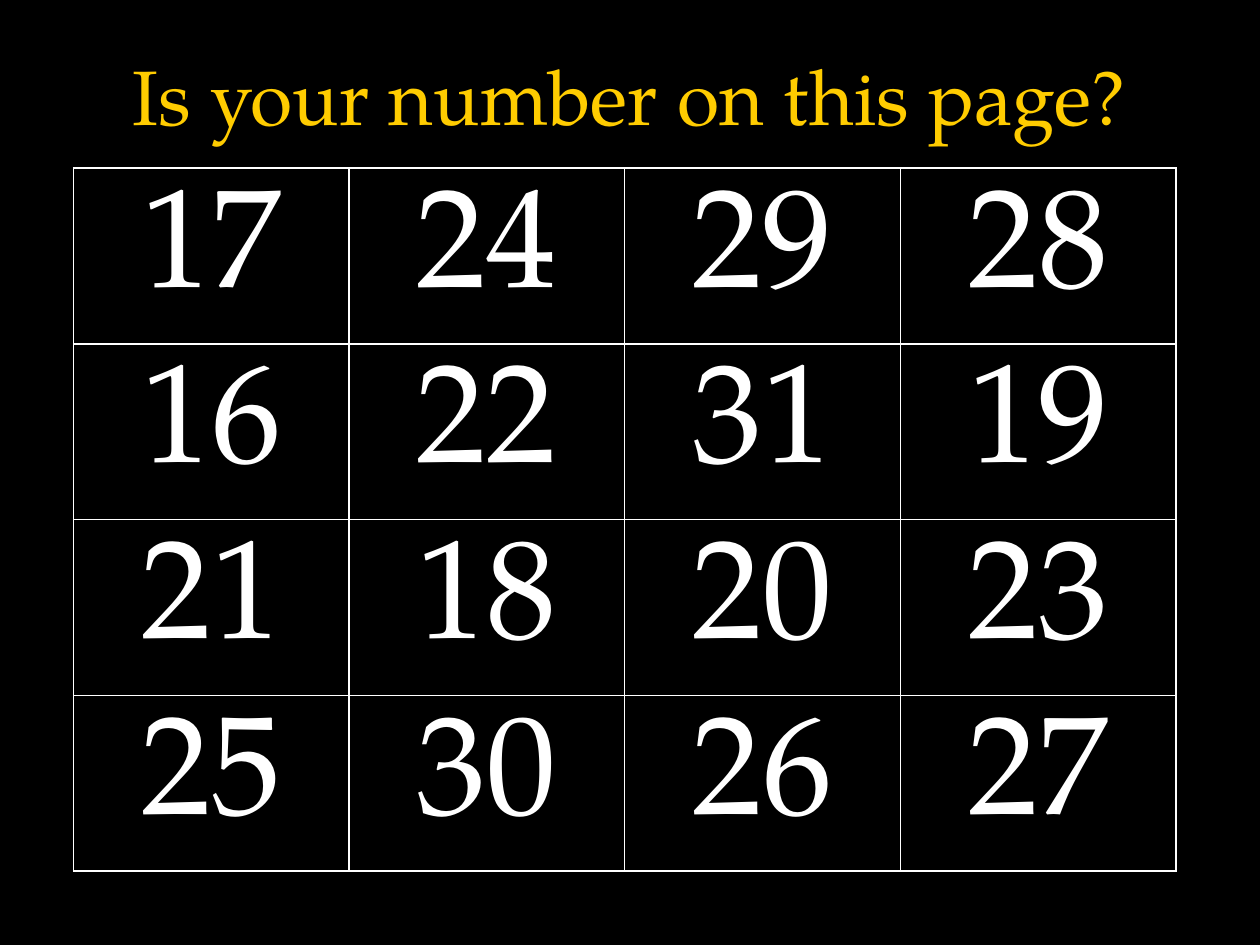
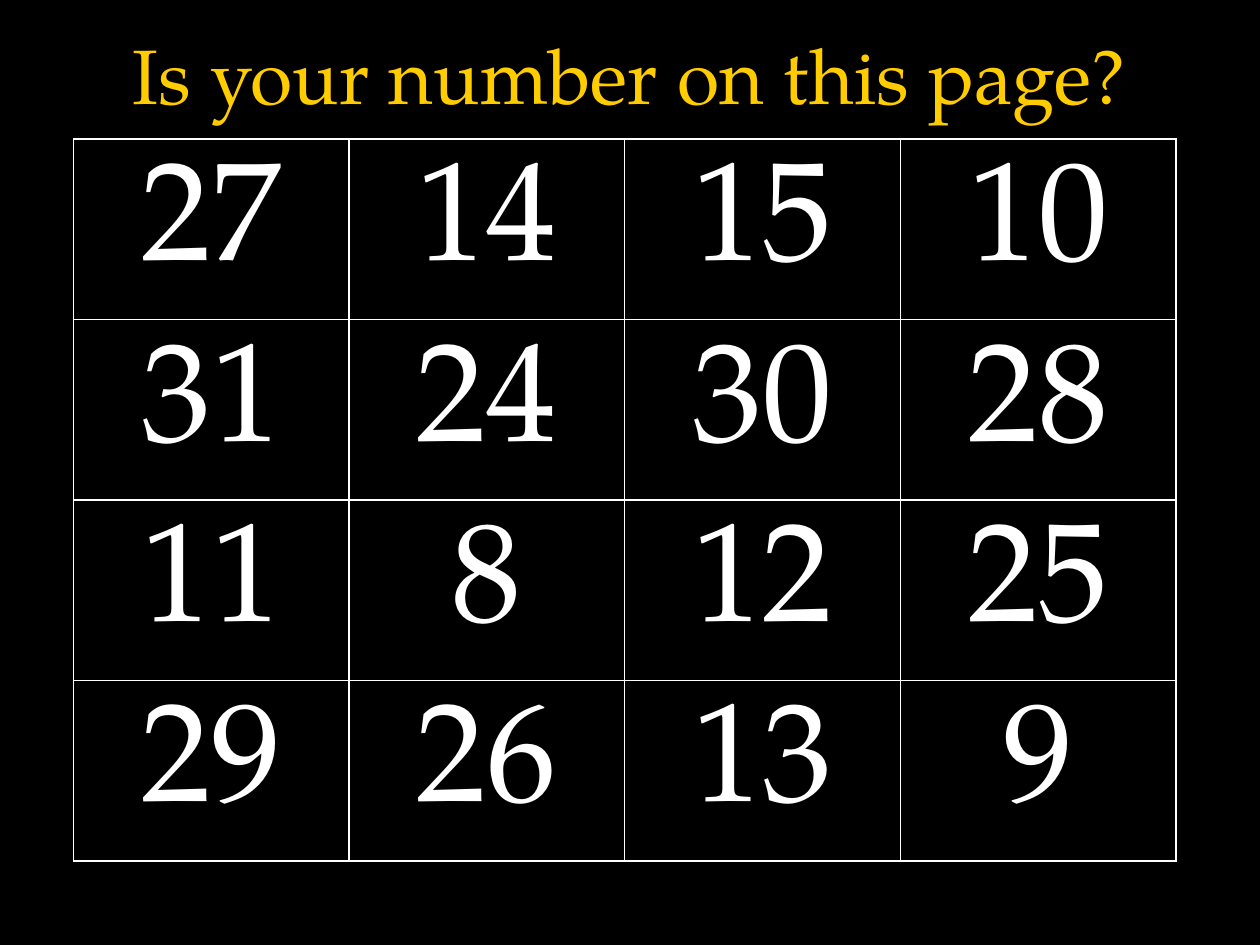
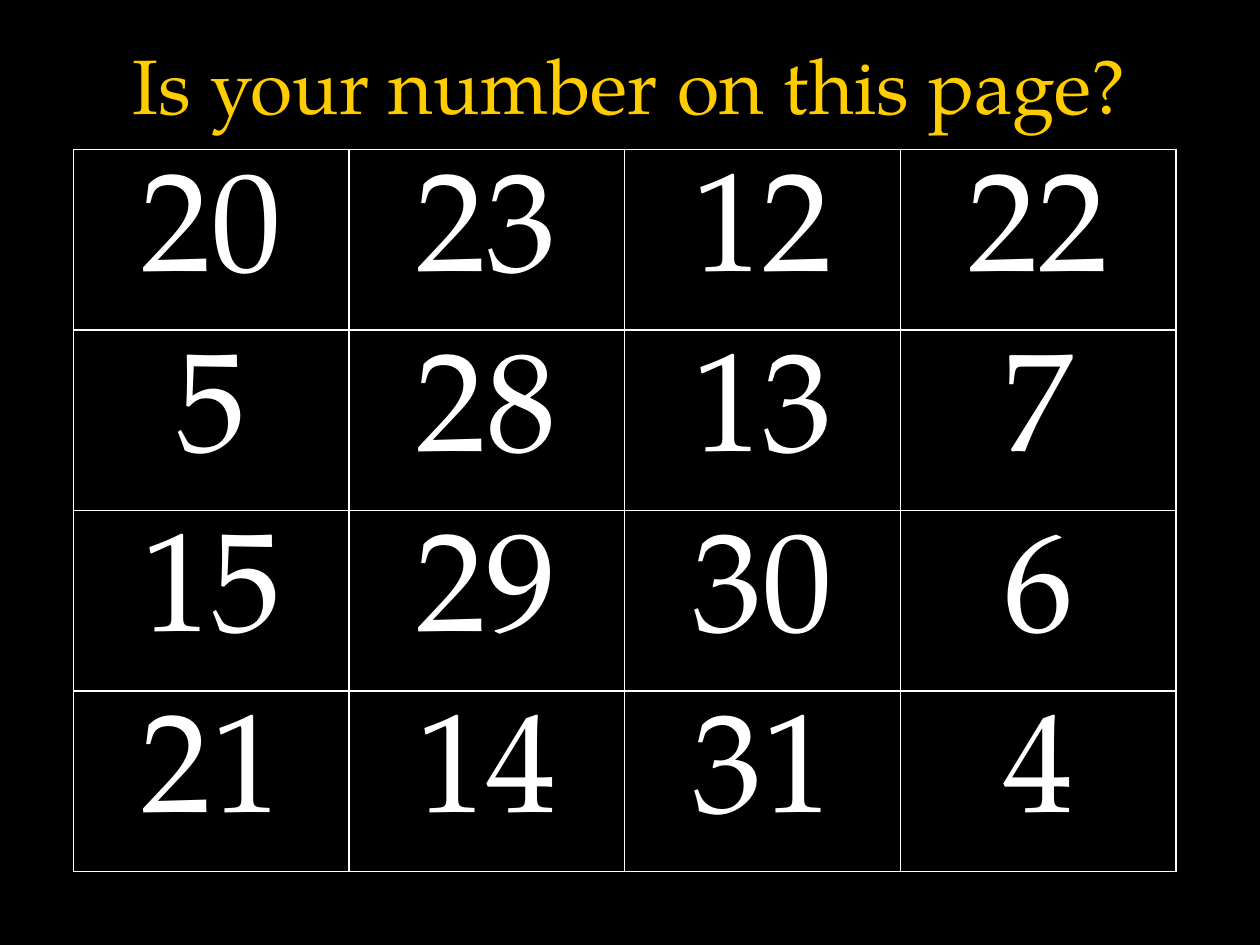
from itertools import product
from lxml.etree import SubElement
from pptx import Presentation
from pptx.dml.color import RGBColor as RGB
from pptx.enum.text import MSO_ANCHOR as ANCHOR, MSO_AUTO_SIZE as AUTO, PP_ALIGN as ALIGN
from pptx.oxml.ns import qn
from pptx.util import Inches, Pt

COLORS = {"back": "000000", "title": "FFCC00", "number": "FFFFFF", "border": "FFFFFF"}
FONT = "TeX Gyre Pagella"
TITLE = "Is your number on this page?"
FORMATS = {
    "title": {"name": FONT, "size": Pt(44), "bold": False},
    "number": {"name": FONT, "size": Pt(80), "bold": False},
}
CARDS = [
    {"title_top": 1 / 3, "top": 4 / 3, "height": 5.58, "pad": 0.03,
     "numbers": [[17, 24, 29, 28], [16, 22, 31, 19], [21, 18, 20, 23], [25, 30, 26, 27]]},
    {"title_top": 1 / 6, "top": 53 / 48, "height": 5.73, "pad": 0.05,
     "numbers": [[27, 14, 15, 10], [31, 24, 30, 28], [11, 8, 12, 25], [29, 26, 13, 9]]},
    {"title_top": 1 / 4, "top": 19 / 16, "height": 5.73, "pad": 0.05,
     "numbers": [[20, 23, 12, 22], [5, 28, 13, 7], [15, 29, 30, 6], [21, 14, 31, 4]]},
]


def rgb(key):
    return RGB.from_string(COLORS[key])


def fill_solid(fill, key):
    fill.solid()
    fill.fore_color.rgb = rgb(key)


def write(tf, text, style):
    p = tf.paragraphs[0]
    p.alignment = ALIGN.CENTER
    r = p.add_run()
    r.text = text
    for name, value in FORMATS[style].items():
        setattr(r.font, name, value)
    r.font.color.rgb = rgb(style)


def add_title(s, left, top, width, height):
    sp = s.shapes.title
    box = {"left": left, "top": top, "width": width, "height": height}
    for name, value in box.items():
        setattr(sp, name, Inches(value))
    tf = sp.text_frame
    tf.auto_size = AUTO.NONE
    tf.word_wrap = True
    tf.vertical_anchor = ANCHOR.TOP
    write(tf, TITLE, "title")


def add_borders(cell):
    pr = cell._tc.get_or_add_tcPr()
    for i, side in enumerate(("lnL", "lnR", "lnT", "lnB")):
        ln = pr.makeelement(qn(f"a:{side}"), {"w": str(Pt(1))})
        fill = SubElement(ln, qn("a:solidFill"))
        SubElement(fill, qn("a:srgbClr"), val=COLORS["border"])
        pr.insert(i, ln)


def add_grid(s, left, top, width, height, numbers, pad):
    rows, cols = len(numbers), len(numbers[0])
    frame = s.shapes.add_table(rows, cols, *map(Inches, (left, top, width, height)))
    table = frame.table
    table.first_row = table.horz_banding = False
    for i, j in product(range(rows), range(cols)):
        cell = table.cell(i, j)
        fill_solid(cell.fill, "back")
        add_borders(cell)
        cell.vertical_anchor = ANCHOR.MIDDLE
        cell.margin_top = cell.margin_bottom = Inches(pad)
        write(cell.text_frame, str(numbers[i][j]), "number")


def add_card(prs, card):
    s = prs.slides.add_slide(prs.slide_layouts.get_by_name("Title Only"))
    add_title(s, 2 / 3, card["title_top"], 8.66, 0.84)
    add_grid(s, 7 / 12, card["top"], 8.75, card["height"], card["numbers"], card["pad"])


def main():
    prs = Presentation()
    prs.slide_width, prs.slide_height = Inches(10), Inches(7.5)
    fill_solid(prs.slide_master.background.fill, "back")
    for card in CARDS:
        add_card(prs, card)
    prs.save("out.pptx")


if __name__ == "__main__":
    main()
